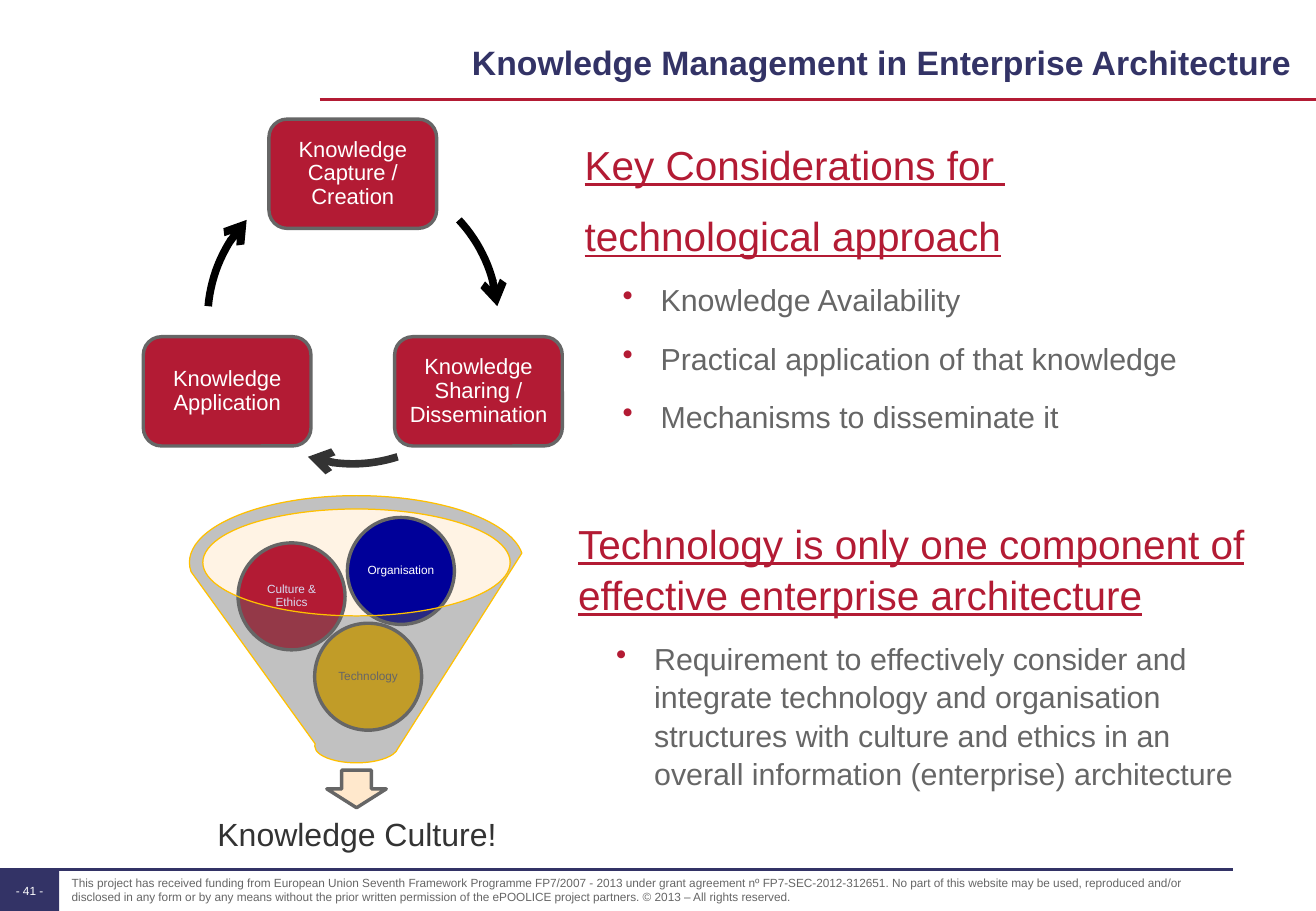
from math import cos, radians, sin

from lxml.etree import SubElement
from pptx import Presentation
from pptx.dml.color import RGBColor
from pptx.enum.shapes import MSO_CONNECTOR as Connector, MSO_SHAPE as Shape
from pptx.enum.text import MSO_ANCHOR as Anchor, PP_ALIGN as Align
from pptx.oxml.ns import qn
from pptx.util import Pt

COLORS = {
    "red": "B31B34", "navy": "333366", "gray": "666666", "dark": "333333",
    "black": "000000", "white": "FFFFFF", "blue": "000099", "gold": "FFC000",
    "cream": "FFE2BD", "peach": "FFE8CC", "lilac": "D8DAF1",
}
TITLE = "Knowledge Management in Enterprise Architecture"
FOOTER = (
    "This project has received funding from European Union Seventh Framework Programme "
    "FP7/2007 - 2013 under grant agreement nº FP7-SEC-2012-312651. No part of this website "
    "may be used, reproduced and/or disclosed in any form or by any means without the prior "
    "written permission of the ePOOLICE project partners. © 2013 – All rights reserved."
)
CYCLE_STEPS = [
    ("Knowledge Capture / Creation", -90),
    ("Knowledge Sharing / Dissemination", 30),
    ("Knowledge Application", 150),
]
CYCLE_ARROWS = [(-43, -5, "black"), (72, 108, "dark"), (185, 223, "black")]
CYCLE_CENTER = (209.1, 189)
CYCLE_RADIUS = 86
STEP_SIZE = (99.4, 64.8)
BALLS = [
    ("Technology", 186.5, 369.4, "gold", "gray"),
    ("Culture & Ethics", 141.1, 321.8, "red", "lilac"),
    ("Organisation", 205.9, 306.7, "blue", "white"),
]
BALL_SIZE = 63.4
CONSIDERATIONS = (
    ["Key Considerations for ", "technological approach"],
    ["Knowledge Availability", "Practical application of that knowledge",
     "Mechanisms to disseminate it"],
)
COMPONENTS = (
    ["Technology is only one component of effective enterprise architecture"],
    ["Requirement to effectively consider and integrate technology and organisation "
     "structures with culture and ethics in an overall information (enterprise) architecture"],
)


def color(name):
    return RGBColor.from_string(COLORS[name])


def points(*values):
    return [Pt(value) for value in values]


def add_paragraph(frame, text, size, ink, align=Align.LEFT, spacing=None, after=None,
                  bullet=False, bold=None, underline=None):
    first = frame.paragraphs[0]
    para = frame.add_paragraph() if first.runs else first
    para.alignment = align
    if spacing:
        para.line_spacing = spacing
    if after:
        para.space_after = Pt(after)
    if bullet:
        para.level = 1
        props = para._p.get_or_add_pPr()
        props.set("marL", str(Pt(45)))
        props.set("indent", str(Pt(-22.5)))
        tint = SubElement(props, qn("a:buClr"))
        SubElement(tint, qn("a:srgbClr")).set("val", COLORS["red"])
        SubElement(props, qn("a:buChar")).set("char", "•")
    span = para.add_run()
    span.text = text
    span.font.name = "Arial"
    span.font.size = Pt(size)
    span.font.color.rgb = color(ink)
    span.font.bold = bold
    span.font.underline = underline


def set_frame(box, insets=(0, 0, 0, 0), anchor=Anchor.TOP):
    frame = box.text_frame
    frame.word_wrap = True
    frame.vertical_anchor = anchor
    (frame.margin_left, frame.margin_top,
     frame.margin_right, frame.margin_bottom) = points(*insets)
    return frame


def add_text_box(page, place, insets=(0, 0, 0, 0), anchor=Anchor.TOP):
    return set_frame(page.shapes.add_textbox(*points(*place)), insets, anchor)


def style_line(shape, ink, width):
    if ink:
        shape.line.color.rgb = color(ink)
        shape.line.width = Pt(width)
    else:
        shape.line.fill.background()


def add_shape(page, kind, place, fill, line=None, width=2, opacity=None):
    shape = page.shapes.add_shape(kind, *points(*place))
    shape.shadow.inherit = False
    shape.fill.solid()
    shape.fill.fore_color.rgb = color(fill)
    if opacity:
        tint = shape.element.spPr.find(qn("a:solidFill")).find(qn("a:srgbClr"))
        SubElement(tint, qn("a:alpha")).set("val", str(opacity * 1000))
    style_line(shape, line, width)
    return shape


def add_rule(page, left, right, top, ink):
    rule = page.shapes.add_connector(
        Connector.STRAIGHT, *points(left, top, right, top))
    style_line(rule, ink, 1.5)
    SubElement(rule.element.spPr, qn("a:effectLst"))


def on_circle(angle):
    return (CYCLE_CENTER[0] + CYCLE_RADIUS * cos(radians(angle)),
            CYCLE_CENTER[1] + CYCLE_RADIUS * sin(radians(angle)))


def add_cycle(page):
    width, height = STEP_SIZE
    for label, angle in CYCLE_STEPS:
        x, y = on_circle(angle)
        step = add_shape(page, Shape.ROUNDED_RECTANGLE,
                         (x - width / 2, y - height / 2, width, height), "red", "gray")
        frame = set_frame(step, (3.6, 3.6, 3.6, 3.6), Anchor.MIDDLE)
        add_paragraph(frame, label, 13, "white", Align.CENTER, 0.9)
    pieces = 16
    for start, end, ink in CYCLE_ARROWS:
        arc = [points(*on_circle(start + (end - start) * piece / pieces))
               for piece in range(pieces + 1)]
        builder = page.shapes.build_freeform(*arc[0])
        builder.add_line_segments(arc[1:], close=False)
        arrow = builder.convert_to_shape()
        arrow.shadow.inherit = False
        arrow.fill.background()
        style_line(arrow, ink, 4.5)
        SubElement(arrow.element.spPr.find(qn("a:ln")), qn("a:tailEnd")).set("type", "arrow")


def add_funnel(page):
    add_shape(page, Shape.OVAL, (120.2, 301.7, 182.9, 63.4), "cream", opacity=40)
    add_shape(page, Shape.DOWN_ARROW, (193.7, 456.5, 35.3, 22.3), "peach", "gray")
    frame = add_text_box(page, (80.6, 474.5, 262.1, 42.5),
                         (10.8, 10.8, 10.8, 10.8), Anchor.MIDDLE)
    add_paragraph(frame, "Knowledge Culture!", 19, "dark", Align.CENTER, 0.9)
    for label, left, top, fill, ink in BALLS:
        ball = add_shape(page, Shape.OVAL, (left, top, BALL_SIZE, BALL_SIZE), fill, "gray")
        frame = set_frame(ball, (0.7, 0.7, 0.7, 0.7), Anchor.MIDDLE)
        add_paragraph(frame, label, 7, ink, Align.CENTER, 0.9)
    add_shape(page, Shape.FUNNEL, (112.3, 293.8, 198, 158.4), "gray", "gold", 0.75, 40)


def add_outline(page, place, outline, bullet_align):
    headings, bullets = outline
    frame = add_text_box(page, place)
    for heading in headings:
        add_paragraph(frame, heading, 24, "red", spacing=1.05, after=12, underline=True)
    for bullet in bullets:
        add_paragraph(frame, bullet, 18, "gray", bullet_align, 1.05, 12, bullet=True)


def main():
    deck = Presentation()
    deck.slide_width, deck.slide_height = points(780, 540)
    page = deck.slides.add_slide(deck.slide_layouts[6])

    number = add_shape(page, Shape.RECTANGLE, (0, 515.5, 35, 24.5), "navy")
    add_paragraph(set_frame(number, anchor=Anchor.MIDDLE), "- 41 -", 7, "white", Align.CENTER)
    add_rule(page, 0, 730.8, 515.5, "navy")
    footer = add_text_box(page, (42.5, 515.5, 677.5, 23.8), anchor=Anchor.MIDDLE)
    add_paragraph(footer, FOOTER, 7, "gray")

    add_rule(page, 189.5, 780, 59, "red")
    title = add_text_box(page, (244.8, 10.8, 535.2, 34.6), (0, 11.5, 14.4, 0))
    add_paragraph(title, TITLE, 20, "navy", Align.RIGHT, 1.1, bold=True)

    add_cycle(page)
    add_funnel(page)
    add_outline(page, (346.5, 81.4, 433.5, 203.8), CONSIDERATIONS, Align.JUSTIFY)
    add_outline(page, (342.7, 306, 403.9, 189.4), COMPONENTS, Align.LEFT)
    deck.save("out.pptx")


if __name__ == "__main__":
    main()
